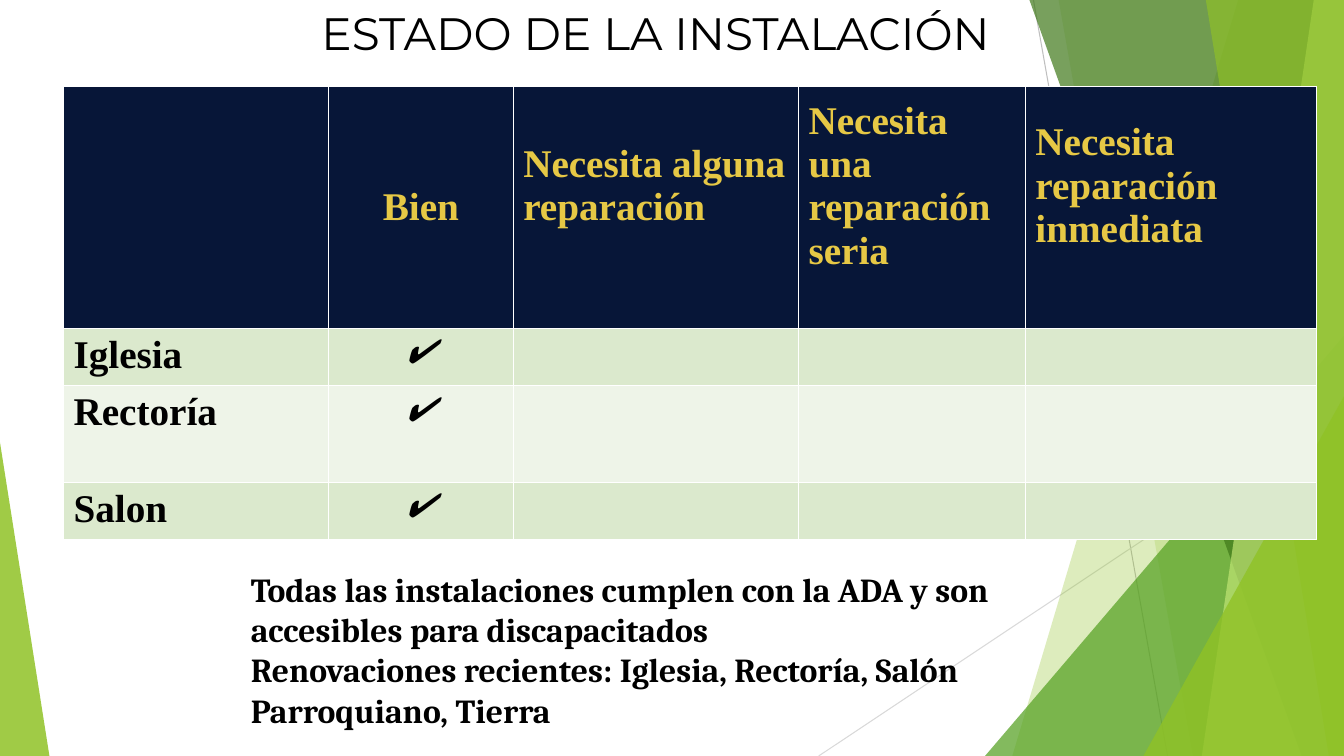
"""Build the slide on the state of the parish facilities."""
import pptx
import pptx.util
import pptx.dml.color
import pptx.enum.shapes
import pptx.enum.text
import pptx.oxml
import pptx.oxml.ns
import lxml.etree

Inches = pptx.util.Inches
Pt = pptx.util.Pt
qn = pptx.oxml.ns.qn
Align = pptx.enum.text.PP_ALIGN
Anchor = pptx.enum.text.MSO_ANCHOR
Kind = pptx.enum.shapes.MSO_SHAPE


def paint(fill, color, alpha=100):
    fill.solid()
    fill.fore_color.rgb = pptx.dml.color.RGBColor.from_string(color)
    if alpha < 100:
        tone = fill._xPr.find(qn("a:solidFill"))[0]
        lxml.etree.SubElement(tone, qn("a:alpha")).set("val", str(alpha * 1000))


def write(para, text, size, face, color="000000", bold=False, slant=False):
    run = para.add_run()
    run.text = text
    font = run.font
    font.size, font.name, font.bold, font.italic = Pt(size), face, bold, slant
    paint(font.fill, color)


deck = pptx.Presentation()
deck.slide_width, deck.slide_height = Inches(13.33), Inches(7.5)
slide = deck.slides.add_slide(deck.slide_layouts[6])
shapes = slide.shapes

for x1, y1, x2, y2, color in [
    (10.25, 0, 11.58, 7.5, "BFBFBF"),
    (13.33, 4.03, 8.12, 7.5, "D9D9D9"),
]:
    line = shapes.add_connector(
        pptx.enum.shapes.MSO_CONNECTOR.STRAIGHT,
        Inches(x1), Inches(y1), Inches(x2), Inches(y2))
    line.line.width = Pt(0.75)
    paint(line.line.fill, color)
    lxml.etree.SubElement(line._element.spPr, qn("a:effectLst"))

facets = [
    ("band", (12.28, 10.04), "90C226", 30),
    ("band", (10.5, 11.83), "90C226", 20),
    ("wedge", (9.77, 3.33, 3.56, 1), "54A021", 72),
    ("band", (10.21, 12.91), "3F7819", 70),
    ("band", (13.03, 11.92), "C0E474", 70),
    ("band", (11.96, 13.18), "90C226", 65),
    ("wedge", (11.34, 3.93, 1.99, 1), "90C226", 80),
    ("wedge", (0, 4.39, 0.49, 0), "90C226", 85),
]
for kind, place, color, alpha in facets:
    if kind == "band":
        top, base = place
        edge = shapes.build_freeform(Inches(top), 0)
        edge.add_line_segments([
            (Inches(13.33), 0), (Inches(13.33), Inches(7.5)),
            (Inches(base), Inches(7.5))])
        facet = edge.convert_to_shape()
    else:
        left, top, width, peak = place
        facet = shapes.add_shape(
            Kind.ISOSCELES_TRIANGLE, Inches(left), Inches(top),
            Inches(width), Inches(7.5 - top))
        facet.adjustments[0] = peak
    paint(facet.fill, color, alpha)
    facet.line.fill.background()
    facet.shadow.inherit = False

title = shapes.add_textbox(Inches(3.09), 0, Inches(8.57), Inches(0.97))
title.text_frame.word_wrap = True
write(title.text_frame.paragraphs[0], "ESTADO DE LA INSTALACIÓN", 32.4, "Montserrat")

heads = ["", "Bien", "Necesita alguna reparación",
         "Necesita una reparación seria", "Necesita reparación inmediata"]
rows = [heads] + [[name, "✔", "", "", ""] for name in ("Iglesia", "Rectoría", "Salon")]
widths = [2.63, 1.83, 2.83, 2.25, 2.89]
heights = [2.25, 0.53, 0.96, 0.53]
fills = ["071638", "DBE9CD", "EEF4E8", "DBE9CD"]

table = shapes.add_table(
    len(rows), len(widths), Inches(0.63), Inches(0.86),
    Inches(sum(widths)), Inches(sum(heights))).table
for col, width in zip(table.columns, widths):
    col.width = Inches(width)
for r, texts in enumerate(rows):
    table.rows[r].height = Inches(heights[r])
    for c, text in enumerate(texts):
        cell = table.cell(r, c)
        props = cell._tc.get_or_add_tcPr()
        for side in "LRTB":
            props.append(pptx.oxml.parse_xml(
                f'<a:ln{side} xmlns:a="http://schemas.openxmlformats.org/drawingml/2006/main"'
                ' w="12700"><a:solidFill><a:srgbClr val="FFFFFF"/></a:solidFill>'
                f'</a:ln{side}>'))
        paint(cell.fill, fills[r])
        para = cell.text_frame.paragraphs[0]
        para.alignment = Align.CENTER if c == 1 else Align.LEFT
        if r == 0:
            cell.vertical_anchor = Anchor.MIDDLE
            if c > 1:
                cell.margin_bottom = Inches(0.48)
        if text == "✔":
            write(para, text, 24, "Arial", slant=True)
        elif text:
            color = "E6C845" if r == 0 else "000000"
            write(para, text, 28, "Times New Roman", color, bold=True)

note = shapes.add_textbox(Inches(2.39), Inches(5.59), Inches(8.93), Inches(1.72))
note.text_frame.word_wrap = True
para = note.text_frame.paragraphs[0]
write(para, "Todas las instalaciones cumplen con la ADA y son accesibles para discapacitados",
      24, "Cambria", bold=True)
para.add_line_break()
write(para, "Renovaciones recientes: Iglesia, Rectoría, Salón Parroquiano, Tierra",
      24, "Cambria", bold=True)

deck.save("out.pptx")
